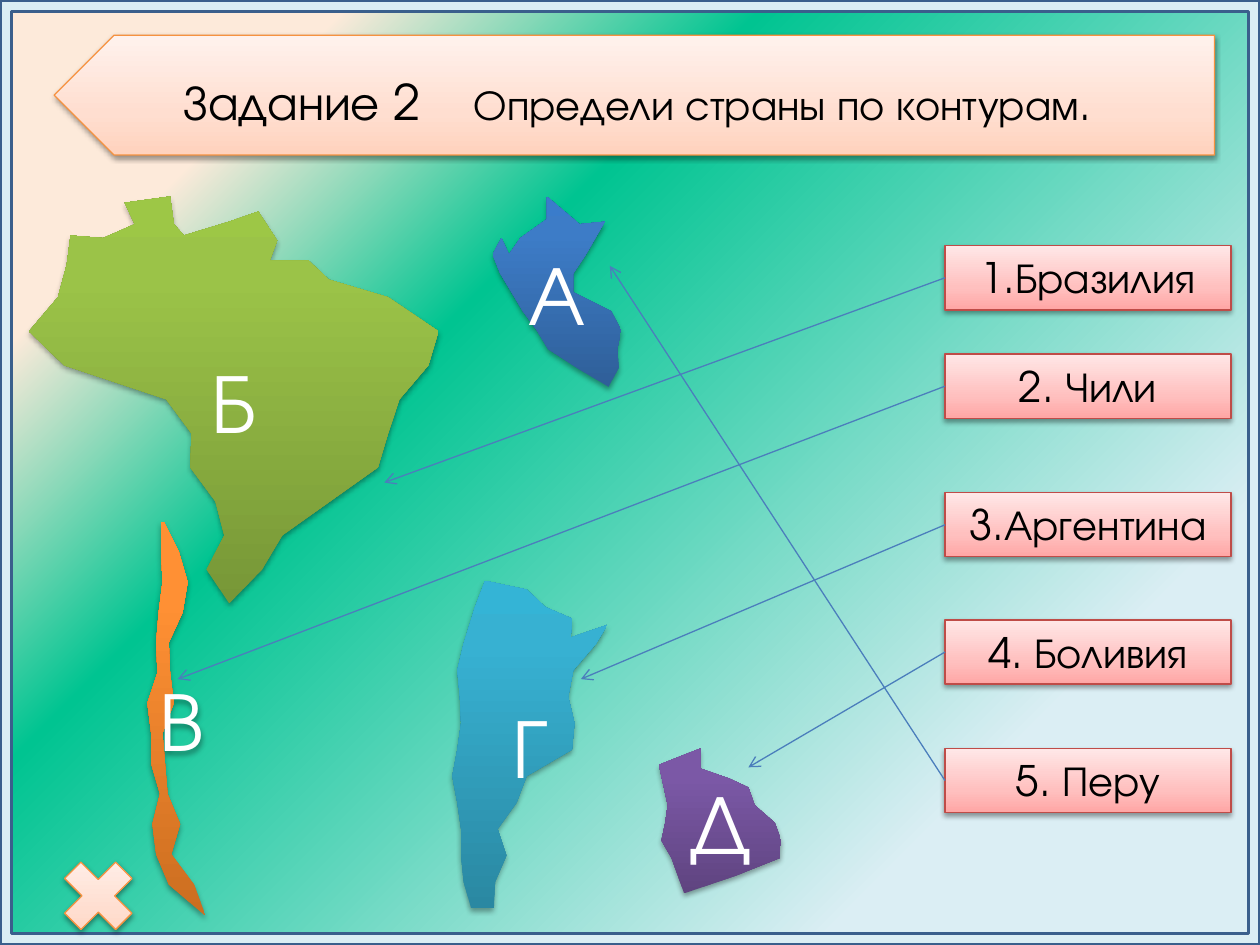
"""Build a map quiz slide that matches country outlines to their names."""
import dataclasses

import pptx
import pptx.dml.color
import pptx.enum.shapes
import pptx.enum.text
import pptx.oxml
import pptx.oxml.ns
import pptx.util

Inches = pptx.util.Inches
SHAPE = pptx.enum.shapes.MSO_SHAPE
ALIGN = pptx.enum.text.PP_ALIGN
ANCHOR = pptx.enum.text.MSO_ANCHOR
FIT = pptx.enum.text.MSO_AUTO_SIZE


@dataclasses.dataclass(frozen=True)
class Theme:
    """Hold the font, colours and type sizes."""
    font: str = "TeX Gyre Adventor"
    ink: str = "000000"
    white: str = "FFFFFF"
    pale: str = "DBEEF4"
    navy: str = "3A5F8C"
    arrow: str = "4B7EBC"
    rust: str = "F69240"
    red: str = "BF4C48"
    peach: tuple = ((0, "FFD2BD"), (35, "FFDED0"), (100, "FFF2ED"))
    rose: tuple = ((0, "FFA6A5"), (35, "FFC0BF"), (100, "FFE7E7"))
    back: tuple = ((20, "DBEEF4"), (65, "00C491", 32), (84, "FDEADA"))
    green: tuple = ((0, "779737"), (80, "9BC348"), (100, "9DC746"))
    teal: tuple = ((0, "2A88A2"), (80, "37B1D2"), (100, "34B4D6"))
    blue: tuple = ((0, "2F5F99"), (80, "3D7CC7"), (100, "3A7CCB"))
    orange: tuple = ((0, "CC6E20"), (80, "FF9034"), (100, "FF9136"))
    violet: tuple = ((0, "5F4480"), (80, "7B58A6"), (100, "7C57A8"))
    head: int = 28
    body: int = 24
    mark: int = 48


THEME = Theme()


@dataclasses.dataclass(frozen=True)
class Land:
    """Hold a border as west and east edges on even rows, in 1/100 inch, under a north crest."""
    mark: str
    hue: tuple
    top: int
    step: int
    west: tuple
    east: tuple
    north: tuple = ()

    def trace(self):
        """Return the border points, up the west side and down the east side."""
        rows = range(self.top, self.top + self.step * len(self.west), self.step)
        left, right = (list(zip(side, rows)) for side in (self.west, self.east))
        return left[::-1] + list(self.north) + right


BRAZIL = Land(
    "Б", THEME.green, top=236, step=27,
    west=(46, 23, 51, 132, 152, 151, 171, 178, 164, 182),
    east=(308, 348, 340, 317, 308, 300, 262, 224, 208, 182),
    north=((53, 210), (56, 187), (82, 189), (107, 178), (99, 161), (135, 156), (138, 178),
           (146, 187), (182, 176), (205, 168), (220, 191), (214, 207), (245, 207), (261, 222)))
ARGENTINA = Land(
    "Г", THEME.teal, top=511, step=21,
    west=(368, 363, 365, 366, 363, 359, 363, 366, 366, 368, 374),
    east=(473, 455, 451, 456, 454, 418, 410, 395, 402, 393, 392),
    north=((377, 482), (385, 461), (418, 468), (433, 482), (454, 491), (453, 506), (482, 496)))
PERU = Land(
    "А", THEME.blue, top=202, step=15,
    west=(391, 397, 406, 415, 426, 435, 458, 483),
    east=(465, 455, 455, 485, 493, 490, 491, 483),
    north=((398, 189), (404, 202), (413, 189), (434, 174), (434, 156), (460, 178), (480, 176)))
CHILE = Land(
    "В", THEME.orange, top=414, step=24,
    west=(128, 128, 129, 126, 124, 125, 117, 120, 120, 127, 121, 124, 134, 162),
    east=(130, 142, 149, 145, 134, 135, 138, 129, 131, 133, 143, 136, 154, 163))
BOLIVIA = Land(
    "Д", THEME.violet, top=625, step=14,
    west=(527, 530, 528, 525, 533, 538, 543),
    east=(594, 599, 615, 620, 619, 584, 543),
    north=((523, 607), (556, 594), (556, 610), (579, 618)))

NAMES = (
    ("1.Бразилия", 1.95, (3.05, 3.83)),
    ("2. Чили", 2.81, (1.41, 5.39)),
    ("3.Аргентина", 3.91, (4.61, 5.39)),
    ("4. Боливия", 4.92, (5.94, 6.09)),
    ("5. Перу", 5.94, (4.84, 2.11)),
)


def parse(tag, inner="", attrs=""):
    """Return one drawing element."""
    space = pptx.oxml.ns.nsdecls("a")
    return pptx.oxml.parse_xml(f"<a:{tag} {space} {attrs}>{inner}</a:{tag}>")


def tint(code):
    """Return a colour from its hex code."""
    return pptx.dml.color.RGBColor.from_string(code)


def blend(fill, root, stops, way='<a:lin ang="16200000" scaled="0"/>'):
    """Fill the root element with a gradient."""
    fill.gradient()
    marks = ""
    for place, code, *alpha in stops:
        clear = "".join(f'<a:alpha val="{part * 1000}"/>' for part in alpha)
        marks += f'<a:gs pos="{place * 1000}"><a:srgbClr val="{code}">{clear}</a:srgbClr></a:gs>'
    old = next(root.iter(pptx.oxml.ns.qn("a:gradFill")))
    new = parse("gradFill", f"<a:gsLst>{marks}</a:gsLst>{way}", 'rotWithShape="1"')
    old.getparent().replace(old, new)


def edge(line, code, width=0.75):
    """Colour a line."""
    line.color.rgb = tint(code)
    line.width = pptx.util.Pt(width)


def shade(shape, alpha=38, gap=1.6):
    """Give a shape a soft shadow below it."""
    shape.shadow.inherit = False
    cast = parse(
        "outerShdw",
        f'<a:srgbClr val="{THEME.ink}"><a:alpha val="{alpha * 1000}"/></a:srgbClr>',
        f'blurRad="{pptx.util.Pt(3.1)}" dist="{pptx.util.Pt(gap)}" dir="5400000" rotWithShape="0"')
    shape.element.spPr.find(pptx.oxml.ns.qn("a:effectLst")).append(cast)


def write(frame, text, size=THEME.body, color=THEME.ink, align=ALIGN.CENTER, anchor=ANCHOR.MIDDLE):
    """Add a run to the first paragraph of a frame."""
    frame.word_wrap = True
    frame.vertical_anchor = anchor
    para = frame.paragraphs[0]
    para.alignment = align
    run = para.add_run()
    run.text = text
    run.font.name = THEME.font
    run.font.size = pptx.util.Pt(size)
    run.font.color.rgb = tint(color)


def panel(slide, kind, box, stops, line):
    """Add a shaded preset shape."""
    shape = slide.shapes.add_shape(kind, *map(Inches, box))
    blend(shape.fill, shape.element, stops)
    edge(shape.line, line)
    shade(shape)
    return shape


def border(slide):
    """Paint the backdrop and the frame around it."""
    way = '<a:path path="circle"><a:fillToRect l="100000" t="100000"/></a:path>'
    blend(slide.background.fill, slide.element, THEME.back, way)
    rim = slide.shapes.add_shape(SHAPE.FRAME, 0, 0, Inches(10), Inches(7.5))
    rim.adjustments[0] = 0.012
    rim.fill.solid()
    rim.fill.fore_color.rgb = tint(THEME.pale)
    edge(rim.line, THEME.navy, 2)
    rim.shadow.inherit = False


def banner(slide):
    """Set the title on a left-pointing banner."""
    plate = panel(slide, SHAPE.PENTAGON, (0.43, 0.28, 9.21, 0.95), THEME.peach, THEME.rust)
    plate.element.spPr.xfrm.set("flipH", "1")
    title = slide.shapes.title
    title.left, title.top, title.width, title.height = map(Inches, (1.36, 0.33, 8, 0.95))
    title.element.getparent().append(title.element)
    frame = title.text_frame
    frame.auto_size = FIT.NONE
    stop = parse("tabLst", f'<a:tab pos="{Inches(2.3)}" algn="l"/>')
    frame.paragraphs[0]._p.get_or_add_pPr().append(stop)
    write(frame, "Задание 2", size=THEME.head, align=ALIGN.LEFT)
    write(frame, "\tОпредели страны по контурам.", align=ALIGN.LEFT)


def draw(slide, land):
    """Draw a country with its letter."""
    first, *rest = land.trace()
    pen = slide.shapes.build_freeform(*first, scale=Inches(0.01))
    pen.add_line_segments(rest, close=True)
    shape = pen.convert_to_shape()
    blend(shape.fill, shape.element, land.hue)
    shape.line.fill.background()
    shade(shape, alpha=35, gap=1.8)
    write(shape.text_frame, land.mark, size=THEME.mark, color=THEME.white)


def label(slide, name, top):
    """Add a country name box."""
    shape = panel(slide, SHAPE.RECTANGLE, (7.5, top, 2.27, 0.51), THEME.rose, THEME.red)
    write(shape.text_frame, name, anchor=ANCHOR.TOP)
    shape.text_frame.auto_size = FIT.SHAPE_TO_FIT_TEXT
    return shape


def arrow(slide, box, goal):
    """Point from the left side of a name box to a country."""
    kind = pptx.enum.shapes.MSO_CONNECTOR.STRAIGHT
    line = slide.shapes.add_connector(kind, box.left, box.top, *map(Inches, goal))
    line.begin_connect(box, 1)
    edge(line.line, THEME.arrow)
    line.line._get_or_add_ln().append(parse("tailEnd", attrs='type="arrow"'))
    line.element.spPr.append(parse("effectLst"))


def main():
    """Build and save the slide."""
    deck = pptx.Presentation()
    deck.slide_width, deck.slide_height = Inches(10), Inches(7.5)
    slide = deck.slides.add_slide(deck.slide_layouts[5])
    border(slide)
    panel(slide, SHAPE.MATH_MULTIPLY, (0.39, 6.72, 0.78, 0.78), THEME.peach, THEME.rust)
    banner(slide)
    for land in (BRAZIL, ARGENTINA, PERU, CHILE, BOLIVIA):
        draw(slide, land)
    for name, top, goal in NAMES:
        arrow(slide, label(slide, name, top), goal)
    deck.save("out.pptx")


if __name__ == "__main__":
    main()
